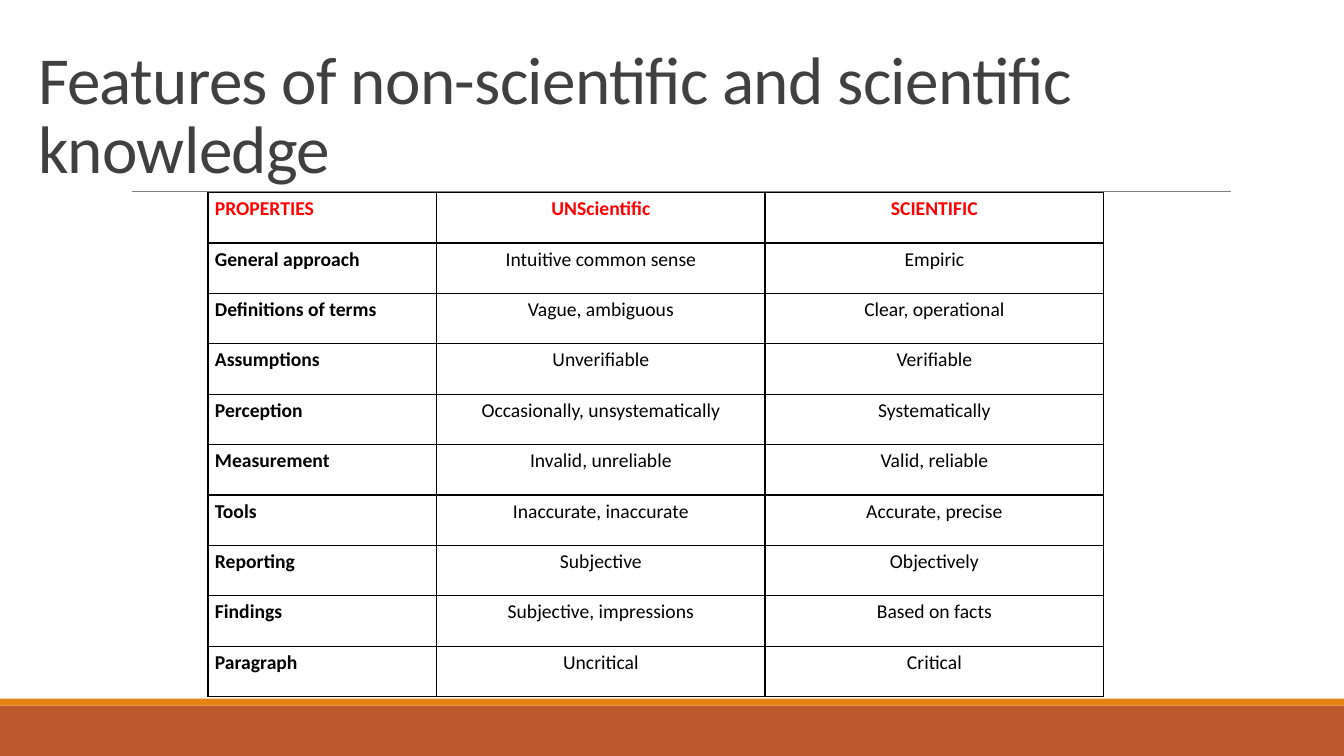
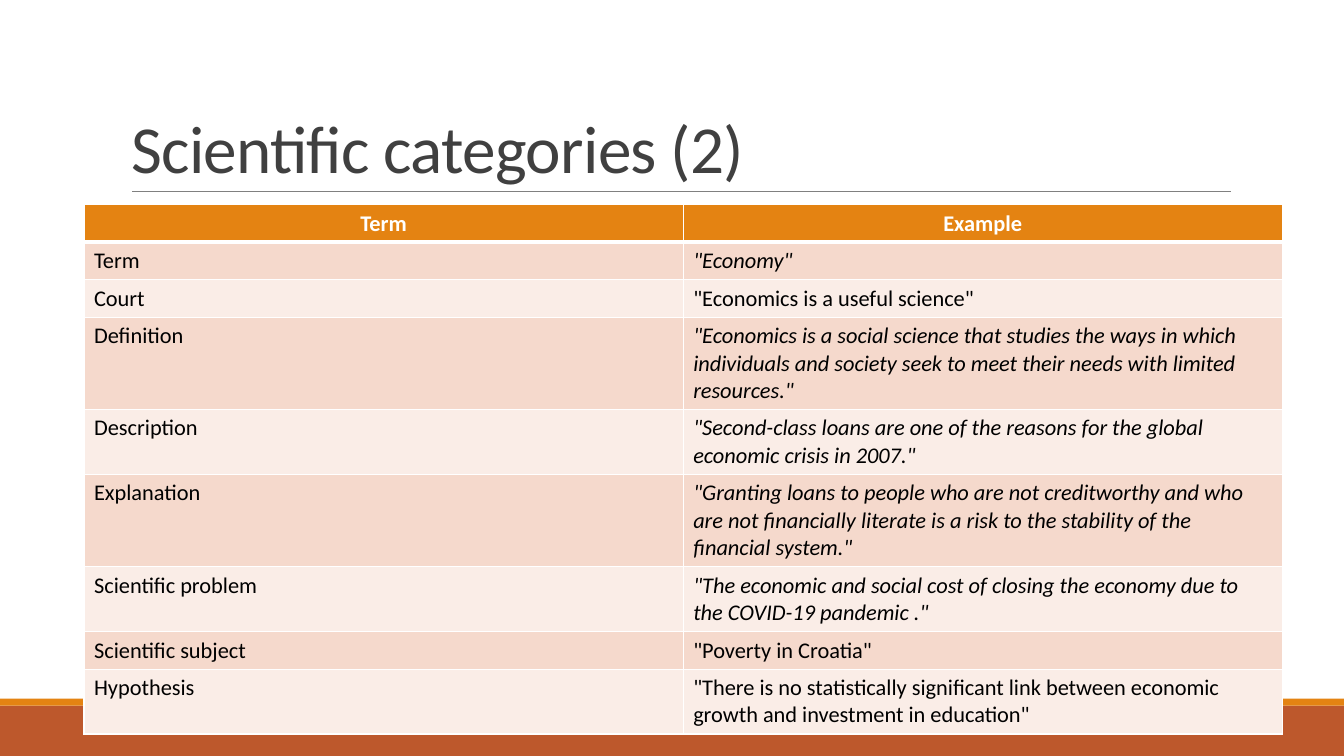
from dataclasses import dataclass

import lxml.etree
import pptx
import pptx.dml.color
import pptx.enum.shapes
import pptx.enum.text
import pptx.oxml.ns
import pptx.util

Pt = pptx.util.Pt
qn = pptx.oxml.ns.qn
Align = pptx.enum.text.PP_ALIGN


@dataclass(frozen=True)
class Theme:
    font: str = "Calibri"
    title_size: float = 48
    features_size: float = 14
    categories_size: float = 16
    title: str = "404040"
    text: str = "000000"
    white: str = "FFFFFF"
    highlight: str = "FF0000"
    footer: str = "BD582C"
    accent: str = "E48312"
    rule: str = "808080"
    row_shades: tuple = ("F5D9CC", "FAEDE7")


THEME = Theme()
SLIDE_WIDTH, SLIDE_HEIGHT = 960, 540

FEATURES = [
    ("PROPERTIES", "UNScientific", "SCIENTIFIC"),
    ("General approach", "Intuitive common sense", "Empiric"),
    ("Definitions of terms", "Vague, ambiguous", "Clear, operational"),
    ("Assumptions", "Unverifiable", "Verifiable"),
    ("Perception", "Occasionally, unsystematically", "Systematically"),
    ("Measurement", "Invalid, unreliable", "Valid, reliable"),
    ("Tools", "Inaccurate, inaccurate", "Accurate, precise"),
    ("Reporting", "Subjective", "Objectively"),
    ("Findings", "Subjective, impressions", "Based on facts"),
    ("Paragraph", "Uncritical", "Critical"),
]

# Term, example, lines the example takes, italic example
CATEGORIES = [
    ("Term", "Example", 1, False),
    ("Term", '"Economy"', 1, True),
    ("Court", '"Economics is a useful science"', 1, False),
    ("Definition", '"Economics is a social science that studies the ways in which '
     'individuals and society seek to meet their needs with limited resources."', 3, True),
    ("Description", '"Second-class loans are one of the reasons for the global '
     'economic crisis in 2007."', 2, True),
    ("Explanation", '"Granting loans to people who are not creditworthy and who are not '
     'financially literate is a risk to the stability of the financial system."', 3, True),
    ("Scientific problem", '"The economic and social cost of closing the economy due to '
     'the COVID-19 pandemic ."', 2, True),
    ("Scientific subject", '"Poverty in Croatia"', 1, False),
    ("Hypothesis", '"There is no statistically significant link between economic '
     'growth and investment in education"', 2, False),
]


def rgb(color):
    return pptx.dml.color.RGBColor.from_string(color)


def apply(target, **values):
    for name, value in values.items():
        setattr(target, name, value)


class Deck:
    """Holds the theme, the presentation and the slide being built."""

    def __init__(self, theme):
        self.theme = theme
        self.presentation = pptx.Presentation()
        apply(self.presentation, slide_width=Pt(SLIDE_WIDTH), slide_height=Pt(SLIDE_HEIGHT))
        self.layout = self.presentation.slide_layouts[5]
        self.slide = None

    def add_slide(self, title, left, width):
        first = self.slide is None
        self.slide = self.presentation.slides.add_slide(self.layout)
        if first:
            self.decorate_layout()
        self.set_title(title, left, width)

    def decorate_layout(self):
        """Draw the shared bands and rule, then move them to the layout."""
        decorations = [
            self.band(504, 36, self.theme.footer),
            self.band(499, 5, self.theme.accent),
            self.rule(94.5, 879, 137),
        ]
        for decoration in decorations:
            self.layout.shapes.element.append(decoration.element)

    def band(self, top, height, color):
        band = self.slide.shapes.add_shape(
            pptx.enum.shapes.MSO_SHAPE.RECTANGLE, 0, Pt(top), Pt(SLIDE_WIDTH), Pt(height))
        band.shadow.inherit = False
        band.fill.solid()
        band.fill.fore_color.rgb = rgb(color)
        band.line.fill.background()
        return band

    def rule(self, start, end, y):
        rule = self.slide.shapes.add_connector(
            pptx.enum.shapes.MSO_CONNECTOR.STRAIGHT, Pt(start), Pt(y), Pt(end), Pt(y))
        rule.line.color.rgb = rgb(self.theme.rule)
        rule.line.width = Pt(0.5)
        lxml.etree.SubElement(rule.element.spPr, qn("a:effectLst"))
        return rule

    def set_title(self, text, left, width):
        title = self.slide.shapes.title
        apply(title, left=Pt(left), top=Pt(22.5), width=Pt(width), height=Pt(114.5))
        apply(title.text_frame, word_wrap=True,
              auto_size=pptx.enum.text.MSO_AUTO_SIZE.NONE,
              vertical_anchor=pptx.enum.text.MSO_ANCHOR.BOTTOM)
        run = self.add_text(title.text_frame, text, dict(size=Pt(self.theme.title_size)),
                            self.theme.title, dict(alignment=Align.LEFT, line_spacing=0.85))
        run.font._element.set("spc", "-50")

    def add_text(self, frame, text, font, color, paragraph):
        """Put one formatted run in the frame's first paragraph."""
        apply(frame.paragraphs[0], **paragraph)
        run = frame.paragraphs[0].add_run()
        run.text = text
        apply(run.font, name=self.theme.font, **font)
        run.font.color.rgb = rgb(color)
        return run

    def add_table(self, left, top, widths, heights):
        frame = self.slide.shapes.add_table(
            len(heights), len(widths), Pt(left), Pt(top), Pt(sum(widths)), Pt(sum(heights)))
        apply(frame.table, first_row=False, horz_banding=False)
        for column, width in zip(frame.table.columns, widths):
            column.width = Pt(width)
        for row, height in zip(frame.table.rows, heights):
            row.height = Pt(height)
        return frame.table

    def fill_cell(self, cell, text, font, color, paragraph, border, bottom=1, shade=None):
        self.add_text(cell.text_frame, text, font, color, paragraph)
        properties = cell._tc.get_or_add_tcPr()
        for side, weight in dict(lnL=1, lnR=1, lnT=1, lnB=bottom).items():
            line = lxml.etree.SubElement(properties, qn(f"a:{side}"), w=str(Pt(weight)))
            solid = lxml.etree.SubElement(line, qn("a:solidFill"))
            lxml.etree.SubElement(solid, qn("a:srgbClr"), val=border)
        if shade:
            cell.fill.solid()
            cell.fill.fore_color.rgb = rgb(shade)
        else:
            cell.fill.background()


def add_features(deck):
    theme = deck.theme
    deck.add_slide("Features of non-scientific and scientific knowledge", 20, 858.5)
    table = deck.add_table(148.5, 137.5, [163.5, 234.5, 242], [36] * len(FEATURES))
    for r, row in enumerate(FEATURES):
        for c, text in enumerate(row):
            cell = table.cell(r, c)
            apply(cell, margin_left=Pt(5), margin_right=Pt(5),
                  margin_top=Pt(0.7), margin_bottom=0)
            deck.fill_cell(
                cell, text, dict(size=Pt(theme.features_size), bold=r == 0 or c == 0),
                theme.text if r else theme.highlight,
                dict(alignment=Align.CENTER if c else Align.LEFT,
                     line_spacing=1.15, space_after=Pt(10)),
                border=theme.text)


def add_categories(deck):
    theme = deck.theme
    deck.add_slide("Scientific categories (2)", 86.5, 792)
    heights = [7.2 + 19.5 * lines for _, _, lines, _ in CATEGORIES]
    table = deck.add_table(60, 146.3, [428, 428], heights)
    for r, (term, example, _, italic) in enumerate(CATEGORIES):
        header = r == 0
        for c, text in enumerate((term, example)):
            deck.fill_cell(
                table.cell(r, c), text,
                dict(size=Pt(theme.categories_size), bold=header, italic=italic and c == 1),
                theme.white if header else theme.text,
                dict(alignment=Align.CENTER if header else Align.LEFT),
                border=theme.white, bottom=3 if header else 1,
                shade=theme.accent if header else theme.row_shades[(r - 1) % 2])


def main():
    deck = Deck(THEME)
    add_features(deck)
    add_categories(deck)
    deck.presentation.save("out.pptx")


if __name__ == "__main__":
    main()
